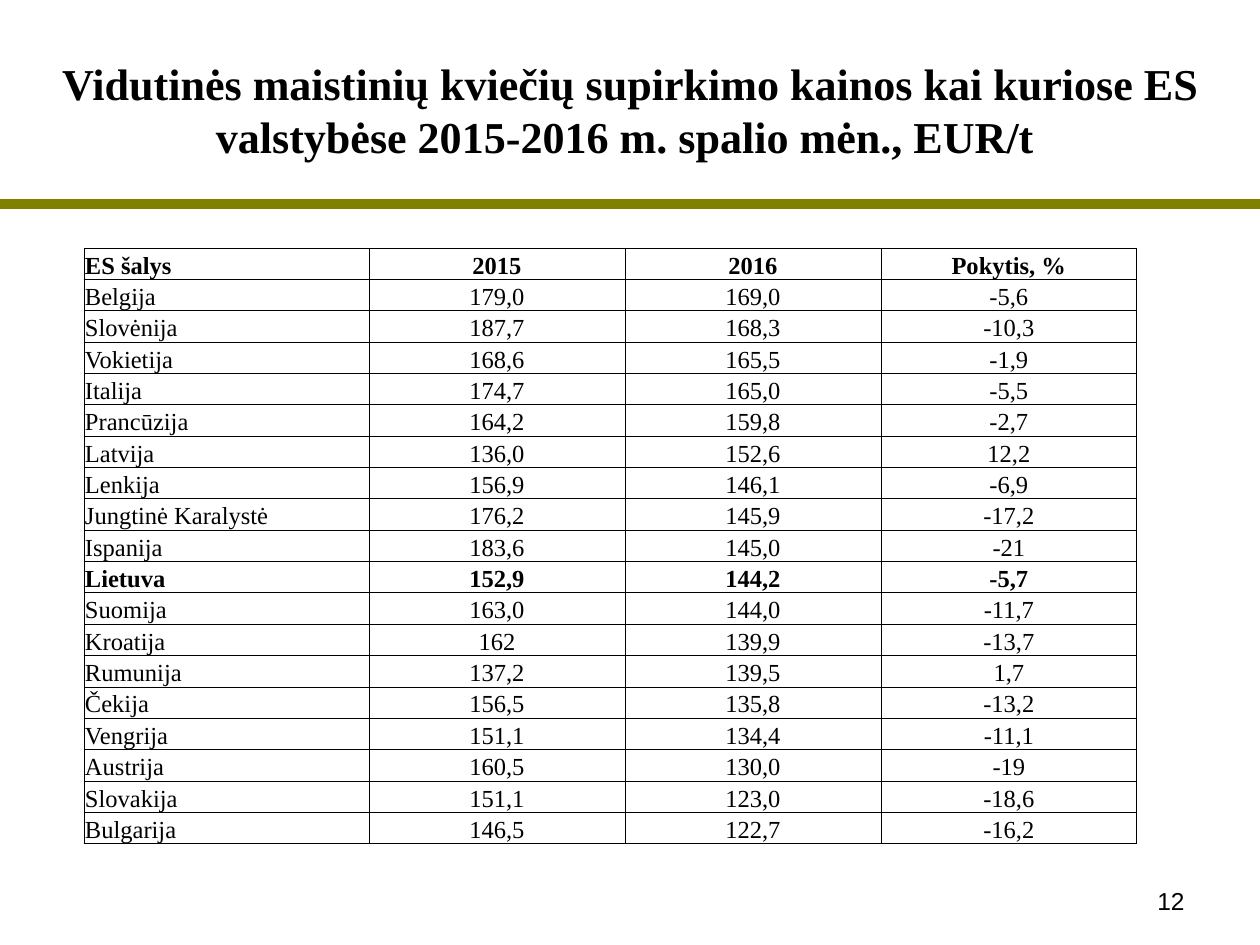
from dataclasses import dataclass

from lxml import etree
from pptx import Presentation
from pptx import util as u
from pptx.dml.color import RGBColor
from pptx.enum import shapes, text
from pptx.oxml import ns

PX = 914400 / 126
COLORS = {"ink": "000000", "olive": "808000", "paper": "FFFFFF"}
SERIF, SANS = "Times New Roman", "Arial"
ALIGN, ANCHOR = text.PP_ALIGN, text.MSO_ANCHOR


@dataclass(frozen=True)
class Box:
    left: int
    top: int
    width: int
    height: int

    def emu(self) -> tuple:
        return tuple(px(n) for n in (self.left, self.top, self.width, self.height))


@dataclass(frozen=True)
class Price:
    country: str
    before: str
    after: str
    change: str
    bold: bool = False

    def values(self) -> tuple:
        return self.country, self.before, self.after, self.change


TITLE = (
    "Vidutinės maistinių kviečių supirkimo kainos kai kuriose ES "
    "valstybėse 2015-2016 m. spalio mėn., EUR/t "
)
PRICES = [
    Price("ES šalys", "2015", "2016", "Pokytis, %", True),
    Price("Belgija", "179,0", "169,0", "-5,6"),
    Price("Slovėnija", "187,7", "168,3", "-10,3"),
    Price("Vokietija", "168,6", "165,5", "-1,9"),
    Price("Italija", "174,7", "165,0", "-5,5"),
    Price("Prancūzija", "164,2", "159,8", "-2,7"),
    Price("Latvija", "136,0", "152,6", "12,2"),
    Price("Lenkija", "156,9", "146,1", "-6,9"),
    Price("Jungtinė Karalystė", "176,2", "145,9", "-17,2"),
    Price("Ispanija", "183,6", "145,0", "-21"),
    Price("Lietuva", "152,9", "144,2", "-5,7", True),
    Price("Suomija", "163,0", "144,0", "-11,7"),
    Price("Kroatija", "162", "139,9", "-13,7"),
    Price("Rumunija", "137,2", "139,5", "1,7"),
    Price("Čekija", "156,5", "135,8", "-13,2"),
    Price("Vengrija", "151,1", "134,4", "-11,1"),
    Price("Austrija", "160,5", "130,0", "-19"),
    Price("Slovakija", "151,1", "123,0", "-18,6"),
    Price("Bulgarija", "146,5", "122,7", "-16,2"),
]
TITLE_BOX = Box(25, 44, 1211, 130)
NUMBER_BOX = Box(903, 876, 294, 50)
TABLE_BOX = Box(84, 248, 1053, 596)
COLUMNS = [285, 256, 256, 256]
RULE_Y = 204


def px(length: float) -> u.Emu:
    return u.Emu(round(length * PX))


def color(name: str) -> RGBColor:
    return RGBColor.from_string(COLORS[name])


def add_span(para, words: str, font: str, size: float, bold: bool, align) -> None:
    para.alignment = align
    span = para.add_run()
    span.text = words
    span.font.name = font
    span.font.size = u.Pt(size)
    span.font.bold = bold
    span.font.color.rgb = color("ink")


def add_title(page) -> None:
    title = page.shapes.title
    title.left, title.top, title.width, title.height = TITLE_BOX.emu()
    frame = title.text_frame
    frame.word_wrap = True
    frame.auto_size = text.MSO_AUTO_SIZE.NONE
    frame.vertical_anchor = ANCHOR.MIDDLE
    add_span(frame.paragraphs[0], TITLE, SERIF, 25.2, True, ALIGN.CENTER)


def add_rule(page) -> None:
    rule = page.shapes.add_connector(
        shapes.MSO_CONNECTOR.STRAIGHT, 0, px(RULE_Y), px(1260), px(RULE_Y)
    )
    rule.line.color.rgb = color("olive")
    rule.line.width = u.Pt(6)
    etree.SubElement(rule._element.spPr, ns.qn("a:effectLst"))


def add_page_number(page) -> None:
    box = page.shapes.add_textbox(*NUMBER_BOX.emu())
    frame = box.text_frame
    frame.word_wrap = True
    frame.vertical_anchor = ANCHOR.MIDDLE
    add_span(frame.paragraphs[0], "12", SANS, 14, False, ALIGN.RIGHT)


def add_borders(cell) -> None:
    properties = cell._tc.get_or_add_tcPr()
    for side in ("lnL", "lnR", "lnT", "lnB"):
        line = etree.SubElement(properties, ns.qn(f"a:{side}"), w=str(u.Pt(0.5)))
        fill = etree.SubElement(line, ns.qn("a:solidFill"))
        etree.SubElement(fill, ns.qn("a:srgbClr"), val=COLORS["ink"])


def format_cell(cell, words: str, bold: bool, align) -> None:
    cell.margin_left = cell.margin_right = cell.margin_top = px(1)
    cell.margin_bottom = 0
    cell.vertical_anchor = ANCHOR.BOTTOM
    add_borders(cell)
    cell.fill.background()
    add_span(cell.text_frame.paragraphs[0], words, SERIF, 14, bold, align)


def add_price_table(page) -> None:
    frame = page.shapes.add_table(len(PRICES), len(COLUMNS), *TABLE_BOX.emu())
    table = frame.table
    table.first_row = table.horz_banding = False
    for column, width in zip(table.columns, COLUMNS):
        column.width = px(width)
    for row, price in zip(table.rows, PRICES):
        row.height = px(TABLE_BOX.height / len(PRICES))
        for index, (cell, words) in enumerate(zip(row.cells, price.values())):
            align = ALIGN.CENTER if index else ALIGN.LEFT
            format_cell(cell, words, price.bold, align)


def main() -> None:
    deck = Presentation()
    deck.slide_width, deck.slide_height = px(1260), px(945)
    page = deck.slides.add_slide(deck.slide_layouts.get_by_name("Title Only"))
    page.background.fill.solid()
    page.background.fill.fore_color.rgb = color("paper")
    add_title(page)
    add_rule(page)
    add_page_number(page)
    add_price_table(page)
    deck.save("out.pptx")


if __name__ == "__main__":
    main()
